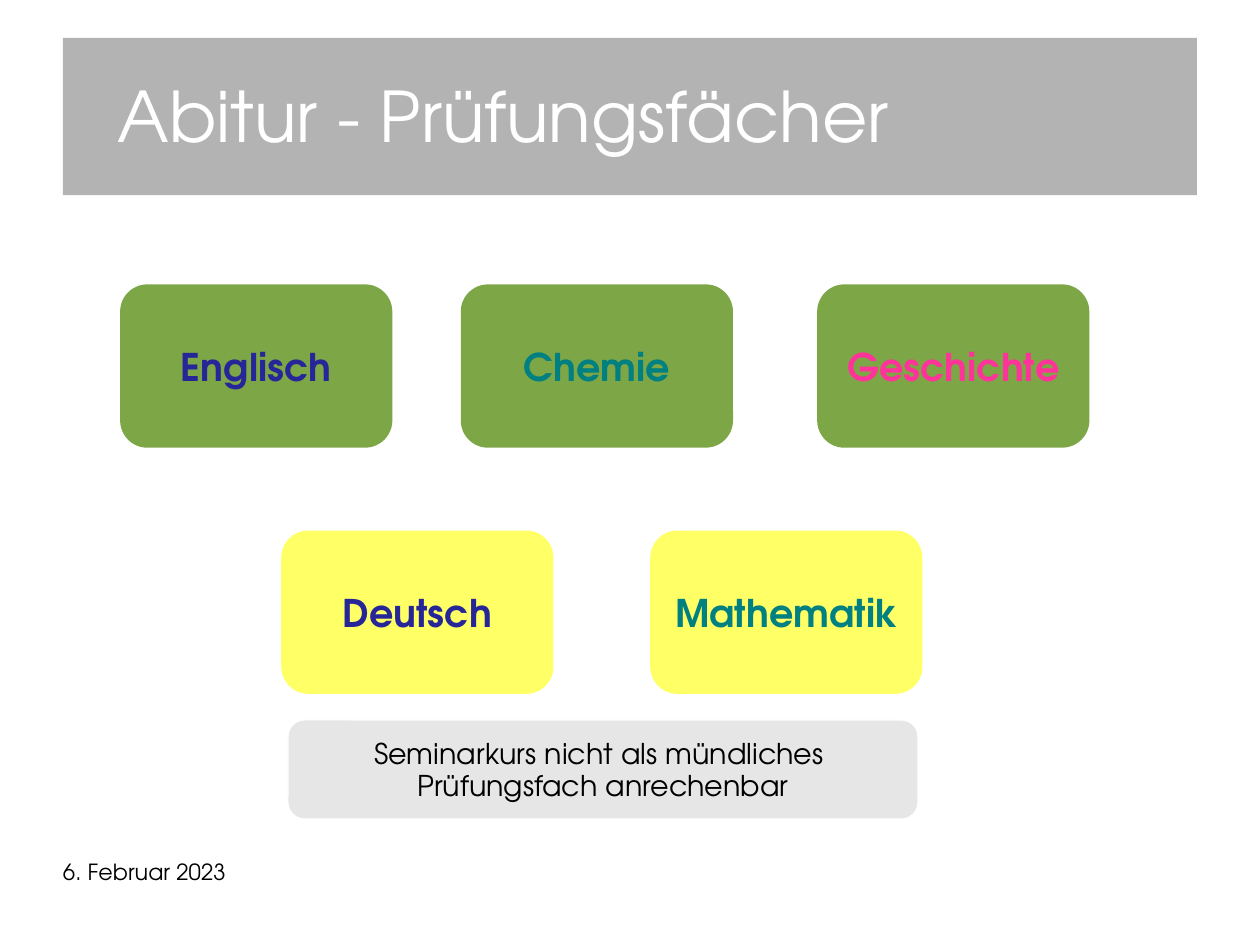
from dataclasses import dataclass

from pptx import Presentation
from pptx.dml.color import RGBColor
from pptx.enum.shapes import MSO_SHAPE
from pptx.enum.text import MSO_ANCHOR, PP_ALIGN
from pptx.util import Cm, Pt


@dataclass(frozen=True)
class Theme:
    font: str = "TeX Gyre Adventor"
    banner: str = "B3B3B3"
    written: str = "7DA647"
    core: str = "FFFF66"
    note: str = "E6E6E6"
    white: str = "FFFFFF"
    black: str = "000000"
    languages: str = "262699"
    sciences: str = "008080"
    society: str = "FF3399"
    title_size: int = 44
    subject_size: int = 24
    note_size: int = 18
    date_size: int = 14


theme = Theme()


def add_panel(kind, box, fill):
    panel = slide.shapes.add_shape(kind, *(Cm(length) for length in box))
    panel.shadow.inherit = False
    panel.fill.solid()
    panel.fill.fore_color.rgb = RGBColor.from_string(fill)
    panel.line.fill.background()
    return panel


def write(shape, lines, size, color, align=PP_ALIGN.CENTER, anchor=MSO_ANCHOR.MIDDLE,
          insets=(0, 0, 0, 0), wrap=False, bold=False, spacing=0.93):
    """Fill a shape with one paragraph per line; insets run left, top, right, bottom in cm."""
    frame = shape.text_frame
    frame.word_wrap = wrap
    frame.vertical_anchor = anchor
    (frame.margin_left, frame.margin_top,
     frame.margin_right, frame.margin_bottom) = (Cm(inset) for inset in insets)
    frame.text = "\n".join(lines)
    for paragraph in frame.paragraphs:
        paragraph.alignment = align
        paragraph.line_spacing = spacing
        paragraph.font.name = theme.font
        paragraph.font.size = Pt(size)
        paragraph.font.bold = bold
        paragraph.font.color.rgb = RGBColor.from_string(color)


presentation = Presentation()
presentation.slide_width = Cm(28)
presentation.slide_height = Cm(21)
slide = presentation.slides.add_slide(presentation.slide_layouts[6])

banner = add_panel(MSO_SHAPE.RECTANGLE, (1.4, 0.84, 25.2, 3.5), theme.banner)
write(banner, ["Abitur - Prüfungsfächer"], theme.title_size, theme.white,
      align=PP_ALIGN.LEFT, insets=(1.21, 0.1, 0.5, 0), wrap=True)

subject_rows = [
    (6.32, theme.written, [
        (2.67, "Englisch", theme.languages),
        (10.24, "Chemie", theme.sciences),
        (18.16, "Geschichte", theme.society),
    ]),
    (11.79, theme.core, [
        (6.25, "Deutsch", theme.languages),
        (14.45, "Mathematik", theme.sciences),
    ]),
]
for top, fill, subjects in subject_rows:
    for left, subject, color in subjects:
        card = add_panel(MSO_SHAPE.ROUNDED_RECTANGLE, (left, top, 6.05, 3.63), fill)
        write(card, [subject], theme.subject_size, color, bold=True, spacing=1.0)

seminar_note = add_panel(MSO_SHAPE.ROUNDED_RECTANGLE, (6.4, 16, 14, 2.2), theme.note)
seminar_note.line.color.rgb = RGBColor.from_string(theme.white)
seminar_note.line.width = Pt(0.75)
write(seminar_note, ["Seminarkurs nicht als mündliches ", "Prüfungsfach anrechenbar"],
      theme.note_size, theme.black, insets=(0.25, 0.18, 0.25, 0.13))

date = slide.shapes.add_textbox(Cm(1.4), Cm(19.13), Cm(6.53), Cm(1.45))
write(date, ["6. Februar 2023"], theme.date_size, theme.black,
      align=PP_ALIGN.LEFT, anchor=MSO_ANCHOR.TOP, wrap=True)

presentation.save("out.pptx")
